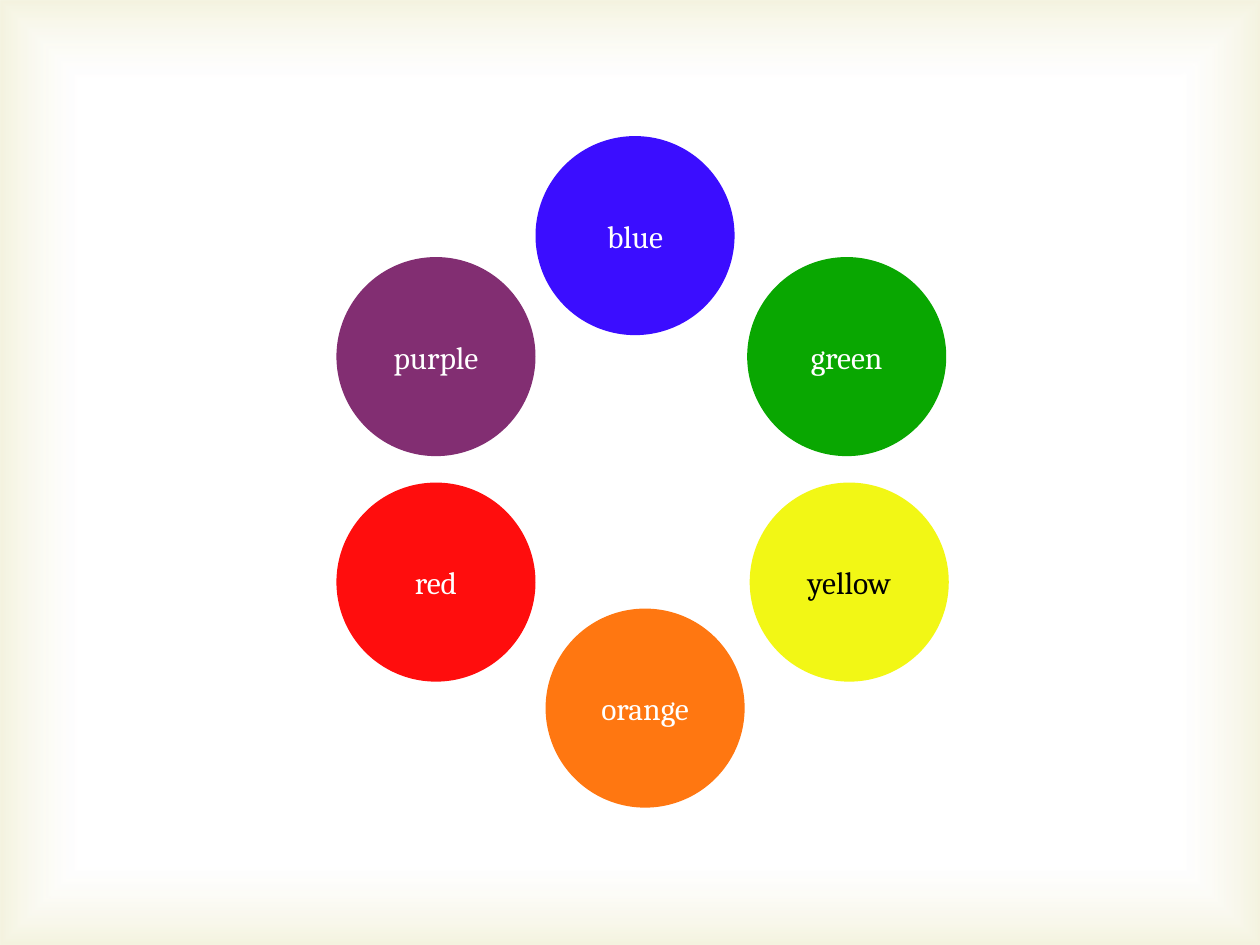
from dataclasses import dataclass

from pptx import Presentation
from pptx import util as u
from pptx.dml.color import RGBColor
from pptx.enum import shapes, text
from pptx.oxml import parse_xml
from pptx.oxml.ns import nsdecls, qn


@dataclass(frozen=True)
class Theme:
    font: str = "Cambria"
    label_size: int = 18
    light: str = "FFFFFF"
    dark: str = "000000"
    vignette: str = "D1CA75"
    blue: str = "3B0DFF"
    green: str = "09A701"
    yellow: str = "F2F715"
    orange: str = "FF7711"
    red: str = "FF0D0D"
    purple: str = "822E72"


THEME = Theme()
WIDTH, HEIGHT = 10, 7.5
DIAMETER = 1.58
LEFT_X, UPPER_Y, LOWER_Y = 2.67, 2.04, 3.83


def write(tf, label, *, font, size, color):
    tf.vertical_anchor = text.MSO_ANCHOR.MIDDLE
    p = tf.paragraphs[0]
    p.alignment = text.PP_ALIGN.CENTER
    r = p.add_run()
    r.text = label
    r.font.name = font
    r.font.size = u.Pt(size)
    r.font.color.rgb = RGBColor.from_string(color)


class SlideBuilder:
    def __init__(self, slide, theme):
        self.slide = slide
        self.theme = theme

    def shape(self, kind, x, y, w, h):
        sp = self.slide.shapes.add_shape(kind, *map(u.Inches, (x, y, w, h)))
        sp.shadow.inherit = False
        sp.line.fill.background()
        return sp

    def background(self):
        fill = self.slide.background.fill
        fill.solid()
        fill.fore_color.rgb = RGBColor.from_string(self.theme.light)

    def layout_vignette(self):
        sp = self.shape(shapes.MSO_SHAPE.RECTANGLE, 0, 0, WIDTH, HEIGHT)
        sp.fill.gradient()
        stops = "".join(
            f'<a:gs pos="{pos * 1000}"><a:srgbClr val="{color}">'
            f'<a:alpha val="{alpha * 1000}"/></a:srgbClr></a:gs>'
            for pos, color, alpha in (
                (83, self.theme.light, 11),
                (100, self.theme.vignette, 23),
            )
        )
        grad = parse_xml(
            f'<a:gradFill {nsdecls("a")} rotWithShape="1"><a:gsLst>{stops}</a:gsLst>'
            '<a:path path="rect"><a:fillToRect l="50000" t="50000" r="50000" b="50000"/>'
            "</a:path></a:gradFill>"
        )
        sp_pr = sp.element.spPr
        sp_pr.replace(sp_pr.find(qn("a:gradFill")), grad)
        layout_shapes = self.slide.slide_layout.shapes
        for placeholder in list(layout_shapes):
            layout_shapes.element.remove(placeholder.element)
        layout_shapes.element.append(sp.element)

    def circle(self, label, x, y, fill, color):
        sp = self.shape(shapes.MSO_SHAPE.OVAL, x, y, DIAMETER, DIAMETER)
        sp.fill.solid()
        sp.fill.fore_color.rgb = RGBColor.from_string(fill)
        write(sp.text_frame, label, font=self.theme.font,
              size=self.theme.label_size, color=color)


def main():
    prs = Presentation()
    prs.slide_width, prs.slide_height = u.Inches(WIDTH), u.Inches(HEIGHT)
    s = SlideBuilder(prs.slides.add_slide(prs.slide_layouts[6]), THEME)
    s.background()
    s.layout_vignette()
    wheel = (
        ("blue", 4.25, 1.08, THEME.blue, THEME.light),
        ("yellow", 5.95, LOWER_Y, THEME.yellow, THEME.dark),
        ("red", LEFT_X, LOWER_Y, THEME.red, THEME.light),
        ("purple", LEFT_X, UPPER_Y, THEME.purple, THEME.light),
        ("orange", 4.33, 4.83, THEME.orange, THEME.light),
        ("green", 5.93, UPPER_Y, THEME.green, THEME.light),
    )
    for hue in wheel:
        s.circle(*hue)
    prs.save("out.pptx")


if __name__ == "__main__":
    main()
